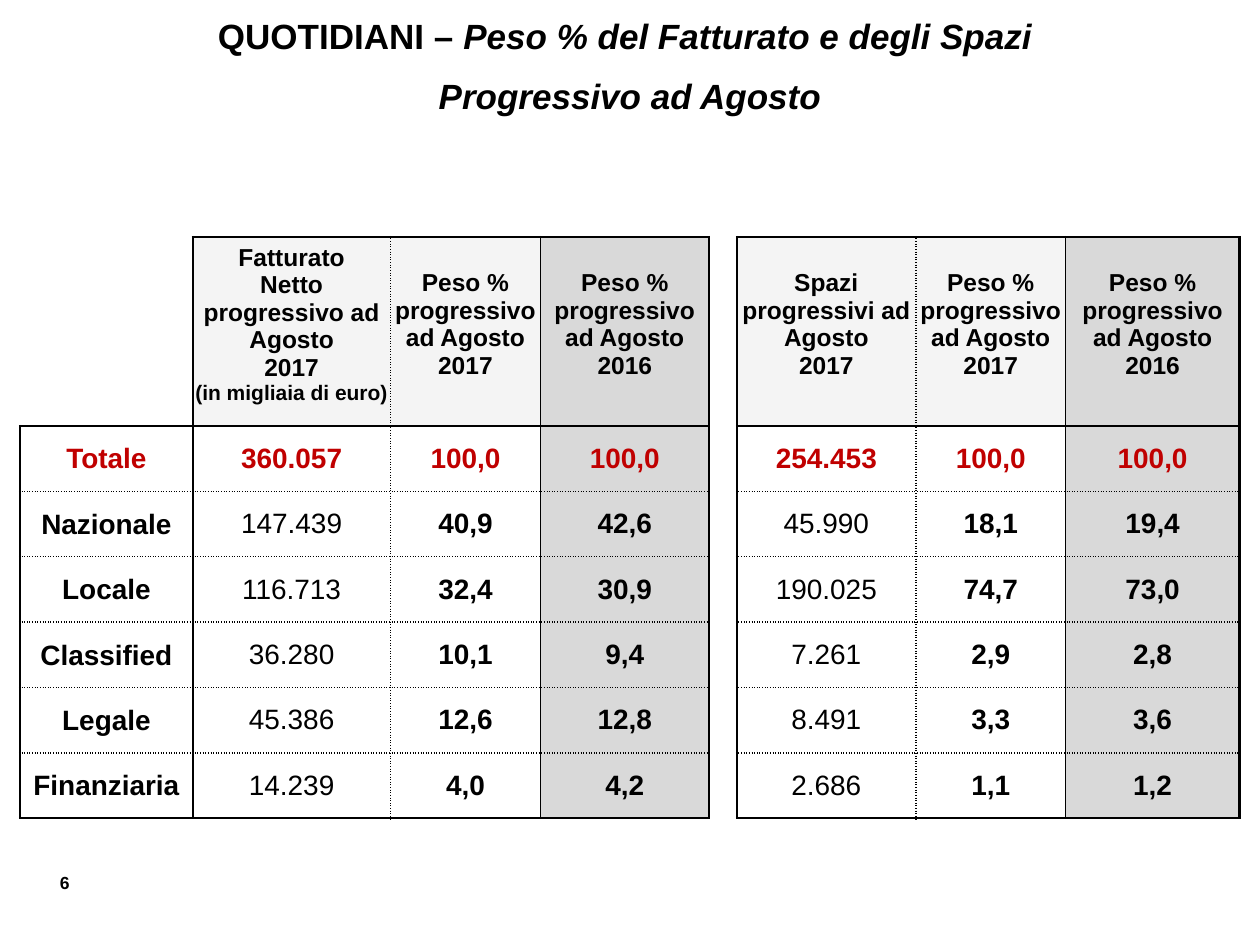
from dataclasses import dataclass
from typing import Optional

from lxml.etree import SubElement
from pptx import Presentation
from pptx.dml.color import RGBColor
from pptx.enum.text import MSO_ANCHOR, MSO_AUTO_SIZE, PP_ALIGN
from pptx.oxml.ns import qn
from pptx.util import Inches, Pt

WIDTH, HEIGHT = 10, 7.5
BLACK, RED, GREY, PALE = "000000", "C00000", "D9D9D9", "F2F2F2"


@dataclass(frozen=True)
class Run:
    text: str
    size: Optional[float] = None
    italic: bool = False
    break_before: bool = False


@dataclass(frozen=True)
class Edge:
    width: float
    dash: str = "solid"


THICK, THIN, DOTTED = Edge(1.5), Edge(1), Edge(1, "sysDot")

COLUMNS = [13.7, 15.7, 11.9, 13.4, 2.2, 14.2, 11.9, 13.8]
ROWS = [20] + [6.92] * 6
COLUMN_EDGES = [THICK, THICK, DOTTED, THIN, THICK, THICK, DOTTED, THIN, THICK]
ROW_EDGES = [THICK, THICK] + [DOTTED] * 5 + [THICK]
GUTTER = 4
AMOUNTS, SHARES_2017, SHARES_2016 = (1, 5), (2, 6), (3, 7)

WEIGHT_2017 = ["Peso % progressivo ad Agosto", "2017"]
WEIGHT_2016 = ["Peso % progressivo ad Agosto", "2016"]
HEADERS = [
    [],
    ["Fatturato", "Netto progressivo ad Agosto",
     [Run("2017"), Run("(in migliaia di euro)", size=12, break_before=True)]],
    WEIGHT_2017,
    WEIGHT_2016,
    [],
    ["Spazi", "progressivi ad Agosto", "2017"],
    WEIGHT_2017,
    WEIGHT_2016,
]
BODY = [
    ["Totale", "360.057", "100,0", "100,0", "", "254.453", "100,0", "100,0"],
    ["Nazionale", "147.439", "40,9", "42,6", "", "45.990", "18,1", "19,4"],
    ["Locale", "116.713", "32,4", "30,9", "", "190.025", "74,7", "73,0"],
    ["Classified", "36.280", "10,1", "9,4", "", "7.261", "2,9", "2,8"],
    ["Legale", "45.386", "12,6", "12,8", "", "8.491", "3,3", "3,6"],
    ["Finanziaria", "14.239", "4,0", "4,2", "", "2.686", "1,1", "1,2"],
]
CONTENT = [HEADERS] + [[[text] if text else [] for text in row] for row in BODY]


def color(value: str) -> RGBColor:
    return RGBColor.from_string(value)


def across(percent: float) -> int:
    return Inches(WIDTH * percent / 100)


def down(percent: float) -> int:
    return Inches(HEIGHT * percent / 100)


def place(sp, left: float, top: float, width: float, height: float) -> None:
    sp.left, sp.top = across(left), down(top)
    sp.width, sp.height = across(width), down(height)


def write(tf, paragraphs: list, *, size: float, fill: str = BLACK, bold: bool = True,
          align=PP_ALIGN.CENTER, gap: float = 0) -> None:
    for i, content in enumerate(paragraphs):
        p = tf.paragraphs[0] if i == 0 else tf.add_paragraph()
        p.alignment = align
        p.space_before = Pt(gap if i else 0)
        for run in [Run(content)] if isinstance(content, str) else content:
            if run.break_before:
                p.add_line_break()
            r = p.add_run()
            r.text = run.text
            r.font.name = "Arial"
            r.font.size = Pt(run.size or size)
            r.font.bold = bold
            r.font.italic = run.italic
            r.font.color.rgb = color(fill)


def add_edge(cell, tag: str, edge: Optional[Edge]) -> None:
    ln = SubElement(cell._tc.get_or_add_tcPr(), qn(tag))
    if edge is None:
        SubElement(ln, qn("a:noFill"))
        return
    ln.set("w", str(Pt(edge.width)))
    SubElement(SubElement(ln, qn("a:solidFill")), qn("a:srgbClr")).set("val", BLACK)
    SubElement(ln, qn("a:prstDash")).set("val", edge.dash)


def draw_edges(cell, row: int, col: int) -> None:
    corner = row == 0 and col == 0
    gutter = col == GUTTER
    add_edge(cell, "a:lnL", None if corner else COLUMN_EDGES[col])
    add_edge(cell, "a:lnR", COLUMN_EDGES[col + 1])
    add_edge(cell, "a:lnT", None if corner or gutter else ROW_EDGES[row])
    add_edge(cell, "a:lnB", None if gutter else ROW_EDGES[row + 1])


def fill_cell(cell, row: int, col: int) -> None:
    if col in SHARES_2016:
        cell.fill.solid()
        cell.fill.fore_color.rgb = color(GREY)
    elif row == 0 and col in AMOUNTS + SHARES_2017:
        cell.fill.solid()
        cell.fill.fore_color.rgb = color(PALE)
        srgb = cell._tc.tcPr.find(qn("a:solidFill")).find(qn("a:srgbClr"))
        SubElement(srgb, qn("a:alpha")).set("val", "80000")
    else:
        cell.fill.background()


def add_weights_table(slide) -> None:
    sp = slide.shapes.add_table(len(ROWS), len(COLUMNS), across(1.6), down(25.07),
                                across(sum(COLUMNS)), down(sum(ROWS)))
    table = sp.table
    table.first_row = table.horz_banding = False
    for column, width in zip(table.columns, COLUMNS):
        column.width = across(width)
    for row, height in zip(table.rows, ROWS):
        row.height = down(height)
    for row, contents in enumerate(CONTENT):
        for col, paragraphs in enumerate(contents):
            cell = table.cell(row, col)
            inset = Inches(0.01 if row == 0 or col == 0 else 0)
            cell.margin_left = cell.margin_right = cell.margin_top = inset
            cell.margin_bottom = Inches(0 if row else 0.12)
            cell.vertical_anchor = MSO_ANCHOR.MIDDLE
            draw_edges(cell, row, col)
            fill_cell(cell, row, col)
            write(cell.text_frame, paragraphs, size=16 if row else 14,
                  fill=RED if row == 1 else BLACK,
                  bold=row < 2 or col not in AMOUNTS)


def add_title(slide) -> None:
    sp = slide.shapes.title
    place(sp, 0, 0.67, 100, 12.53)
    tf = sp.text_frame
    tf.word_wrap = True
    tf.auto_size = MSO_AUTO_SIZE.NONE
    tf.vertical_anchor = MSO_ANCHOR.MIDDLE
    write(tf, [[Run("QUOTIDIANI – "),
                Run("Peso % del Fatturato e degli Spazi ", italic=True)],
               [Run("Progressivo ad Agosto", italic=True)]], size=20, gap=10.5)


def add_page_number(slide) -> None:
    sp = slide.shapes.add_textbox(0, 0, 0, 0)
    place(sp, 1.9, 91.6, 4.6, 3.6)
    sp.text_frame.word_wrap = True
    write(sp.text_frame, ["6"], size=10, align=PP_ALIGN.RIGHT)


def main() -> None:
    prs = Presentation()
    prs.slide_width, prs.slide_height = Inches(WIDTH), Inches(HEIGHT)
    slide = prs.slides.add_slide(prs.slide_layouts[5])
    add_page_number(slide)
    add_title(slide)
    add_weights_table(slide)
    prs.save("out.pptx")


if __name__ == "__main__":
    main()
